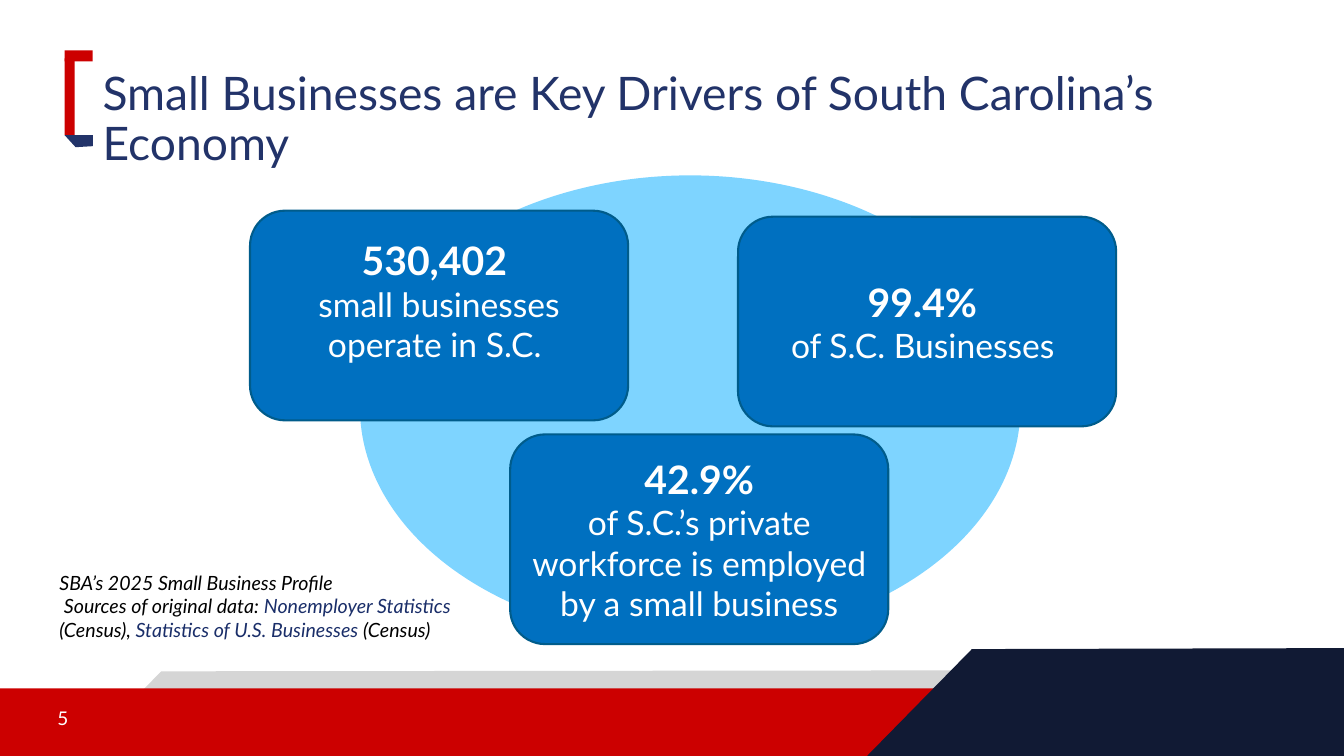
from pptx import Presentation
from pptx.dml.color import RGBColor
from pptx.enum.shapes import MSO_SHAPE
from pptx.enum.text import MSO_ANCHOR, PP_ALIGN
from pptx.util import Pt

PX = 9144  # 100 px to the inch
FONT = "Lato"
WHITE = RGBColor(0xFF, 0xFF, 0xFF)
BLACK = RGBColor(0x00, 0x00, 0x00)
RED = RGBColor(0xCC, 0x00, 0x00)
GREY = RGBColor(0xD5, 0xD5, 0xD5)
DARK = RGBColor(0x11, 0x1A, 0x34)
NAVY = RGBColor(0x22, 0x33, 0x69)
LINK = RGBColor(0x1A, 0x2E, 0x69)
SKY = RGBColor(0x7E, 0xD4, 0xFF)
BLUE = RGBColor(0x00, 0x70, 0xC0)
EDGE = RGBColor(0x00, 0x5C, 0x8B)


class Deck:
    def __init__(self, width, height):
        self.prs = Presentation()
        self.prs.slide_width = width * PX
        self.prs.slide_height = height * PX
        self.slide = self.prs.slides.add_slide(self.prs.slide_layouts[6])
        self.shapes = self.slide.shapes

    def paint(self, shape, fill, edge=None):
        shape.shadow.inherit = False
        shape.fill.solid()
        shape.fill.fore_color.rgb = fill
        if edge is None:
            shape.line.fill.background()
        else:
            shape.line.color.rgb = edge
            shape.line.width = Pt(1.5)
        return shape

    def shape(self, kind, box, fill, edge=None):
        return self.paint(self.shapes.add_shape(kind, *(n * PX for n in box)), fill, edge)

    def poly(self, points, fill):
        form = self.shapes.build_freeform(*points[0], scale=PX)
        form.add_line_segments(points[1:], close=True)
        return self.paint(form.convert_to_shape(), fill)

    def style(self, run, size, color, bold=False, italic=False):
        font = run.font
        font.name, font.size = FONT, Pt(size)
        font.bold, font.italic = bold, italic
        font.color.rgb = color

    def text(self, box, lines, size, italic=False, pitch=None):
        """Each line is a list of (text, color) parts."""
        frame = self.shapes.add_textbox(*(n * PX for n in box)).text_frame
        frame.word_wrap = True
        for i, parts in enumerate(lines):
            para = frame.add_paragraph() if i else frame.paragraphs[0]
            if pitch:
                para.line_spacing = pitch
            for words, color in parts:
                run = para.add_run()
                run.text = words
                self.style(run, size, color, italic=italic)

    def card(self, left, top, figure, label, lift=0):
        box = (left, top, 375, 208)
        frame = self.shape(MSO_SHAPE.ROUNDED_RECTANGLE, box, BLUE, EDGE).text_frame
        frame.word_wrap = True
        frame.vertical_anchor = MSO_ANCHOR.MIDDLE
        frame.margin_bottom = (5 + lift) * PX
        frame.text = f"{figure}\n{label}"
        for para, size, bold in zip(frame.paragraphs, (28, 24), (True, False)):
            para.alignment = PP_ALIGN.CENTER
            self.style(para.runs[0], size, WHITE, bold)


def main():
    deck = Deck(1333, 750)

    # Footer band and page number
    deck.poly([(160, 666), (1020, 665), (1020, 714), (113, 714)], GREY)
    deck.shape(MSO_SHAPE.RECTANGLE, (0, 683, 1333, 67), RED)
    deck.poly([(964, 644), (1333, 643), (1333, 750), (860, 750)], DARK)
    deck.text((47, 696, 300, 40), [[("5", WHITE)]], 13.5)

    # Bracket beside the title
    deck.poly([(64, 58), (74, 58), (74, 136), (64, 134)], RED)
    deck.shape(MSO_SHAPE.RECTANGLE, (64, 50, 28, 11), RED)
    deck.poly([(92, 134), (92, 145), (75, 146), (64, 134)], NAVY)

    # Title
    title = "Small Businesses are Key Drivers of South Carolina’s Economy"
    deck.text((92, 65, 1150, 109), [[(title, NAVY)]], 33, pitch=0.9)

    # Key figures over the ellipse
    deck.shape(MSO_SHAPE.OVAL, (357, 174, 655, 461), SKY)
    deck.card(248, 209, "530,402 ", "small businesses operate in S.C. ", lift=30)
    deck.card(506, 431, "42.9%", "of S.C.’s private workforce is employed by a small business")
    deck.card(732, 215, "99.4% ", "of S.C. Businesses ")

    # Sources
    deck.text((49, 561, 454, 81), [
        [("SBA’s 2025 Small Business Profile", BLACK)],
        [(" Sources of original data: ", BLACK), ("Nonemployer Statistics ", LINK),
         ("(Census), ", BLACK), ("Statistics of U.S. Businesses ", LINK),
         ("(Census)", BLACK)],
    ], 14, italic=True)

    deck.prs.save("out.pptx")


if __name__ == "__main__":
    main()
